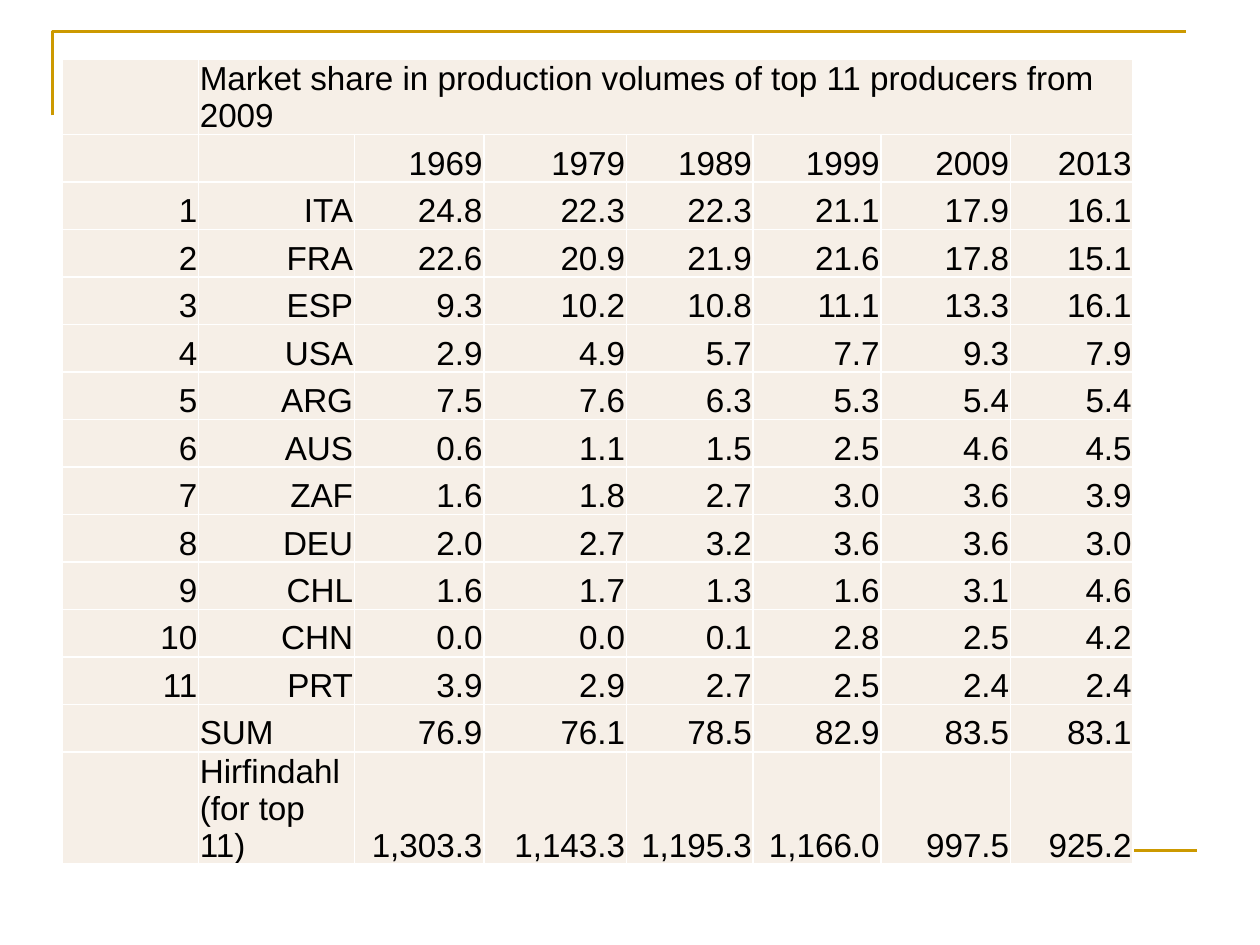
from lxml import etree
from pptx import Presentation
from pptx import util as u
from pptx.dml.color import RGBColor
from pptx.enum import shapes, text
from pptx.oxml import ns

GOLD = RGBColor(0xCC, 0x99, 0x00)
CREAM = RGBColor(0xF6, 0xEF, 0xE7)
WHITE = RGBColor(0xFF, 0xFF, 0xFF)
BLACK = RGBColor(0x00, 0x00, 0x00)

TITLE = "Market share in production volumes of top 11 producers from 2009"
YEARS = ["1969", "1979", "1989", "1999", "2009", "2013"]
SHARES = {
    "ITA": "24.8 22.3 22.3 21.1 17.9 16.1",
    "FRA": "22.6 20.9 21.9 21.6 17.8 15.1",
    "ESP": "9.3 10.2 10.8 11.1 13.3 16.1",
    "USA": "2.9 4.9 5.7 7.7 9.3 7.9",
    "ARG": "7.5 7.6 6.3 5.3 5.4 5.4",
    "AUS": "0.6 1.1 1.5 2.5 4.6 4.5",
    "ZAF": "1.6 1.8 2.7 3.0 3.6 3.9",
    "DEU": "2.0 2.7 3.2 3.6 3.6 3.0",
    "CHL": "1.6 1.7 1.3 1.6 3.1 4.6",
    "CHN": "0.0 0.0 0.1 2.8 2.5 4.2",
    "PRT": "3.9 2.9 2.7 2.5 2.4 2.4",
}
TOTALS = {
    "SUM": "76.9 76.1 78.5 82.9 83.5 83.1",
    "Hirfindahl\n(for top 11)": "1,303.3 1,143.3 1,195.3 1,166.0 997.5 925.2",
}
COLUMN_WIDTHS = [78, 89, 74, 81.5, 72.5, 73, 74, 70]
ROW_HEIGHTS = [34.5] + [27.14] * 13 + [54]


def write(frame, words, size=19, font="Arial", color=BLACK, align=text.PP_ALIGN.LEFT):
    para = frame.paragraphs[0]
    para.text = words
    para.alignment = align
    for span in para.runs:
        span.font.size = u.Pt(size)
        span.font.name = font
        span.font.color.rgb = color


class SlideBuilder:
    def __init__(self, page, accent=GOLD, weight=1.5, cell_fill=CREAM, border=WHITE):
        self.page = page
        self.accent = accent
        self.weight = weight
        self.cell_fill = cell_fill
        self.border = border

    def stroke(self, line):
        line.color.rgb = self.accent
        line.width = u.Pt(self.weight)

    def outline(self, points):
        start, *others = [(u.Pt(x), u.Pt(y)) for x, y in points]
        builder = self.page.shapes.build_freeform(*start)
        builder.add_line_segments(others, close=False)
        shape = builder.convert_to_shape()
        shape.fill.background()
        shape.shadow.inherit = False
        self.stroke(shape.line)

    def rule(self, left, top, right):
        connector = self.page.shapes.add_connector(
            shapes.MSO_CONNECTOR.STRAIGHT, u.Pt(left), u.Pt(top), u.Pt(right), u.Pt(top))
        self.stroke(connector.line)
        etree.SubElement(connector._element.spPr, ns.qn("a:effectLst"))

    def style_cell(self, cell):
        cell.margin_left = cell.margin_right = cell.margin_top = u.Pt(0.75)
        cell.margin_bottom = 0
        cell.vertical_anchor = text.MSO_ANCHOR.BOTTOM
        properties = cell._tc.get_or_add_tcPr()
        for side in ("lnL", "lnR", "lnT", "lnB"):
            edge = etree.SubElement(properties, ns.qn("a:" + side), w=str(u.Pt(1)))
            fill = etree.SubElement(edge, ns.qn("a:solidFill"))
            etree.SubElement(fill, ns.qn("a:srgbClr"), val=str(self.border))
        cell.fill.solid()
        cell.fill.fore_color.rgb = self.cell_fill

    def table(self, left, top, widths, heights, rows):
        table = self.page.shapes.add_table(
            len(heights), len(widths), u.Pt(left), u.Pt(top),
            u.Pt(sum(widths)), u.Pt(sum(heights))).table
        table.first_row = table.horz_banding = False
        for column, width in zip(table.columns, widths):
            column.width = u.Pt(width)
        for row, height in zip(table.rows, heights):
            row.height = u.Pt(height)
        for cell in table.iter_cells():
            self.style_cell(cell)
        for r, row in enumerate(rows):
            for c, (words, align) in enumerate(row):
                if words:
                    write(table.cell(r, c).text_frame, words, align=align)
        return table


def table_rows():
    left, right = text.PP_ALIGN.LEFT, text.PP_ALIGN.RIGHT
    rows = [[("", left), (TITLE, left)]]
    rows.append([(words, right) for words in ["", ""] + YEARS])
    for rank, (country, values) in enumerate(SHARES.items(), 1):
        rows.append([(words, right) for words in [str(rank), country] + values.split()])
    for label, values in TOTALS.items():
        rows.append([("", left), (label, left)] + [(words, right) for words in values.split()])
    return rows


def main():
    deck = Presentation()
    deck.slide_width, deck.slide_height = u.Pt(720), u.Pt(540)
    builder = SlideBuilder(deck.slides.add_slide(deck.slide_layouts[6]))
    builder.outline([(30, 66), (30, 18), (678, 18)])
    builder.rule(36, 486, 684)
    table = builder.table(35.5, 34, COLUMN_WIDTHS, ROW_HEIGHTS, table_rows())
    table.cell(0, 1).merge(table.cell(0, 7))
    deck.save("out.pptx")


if __name__ == "__main__":
    main()
